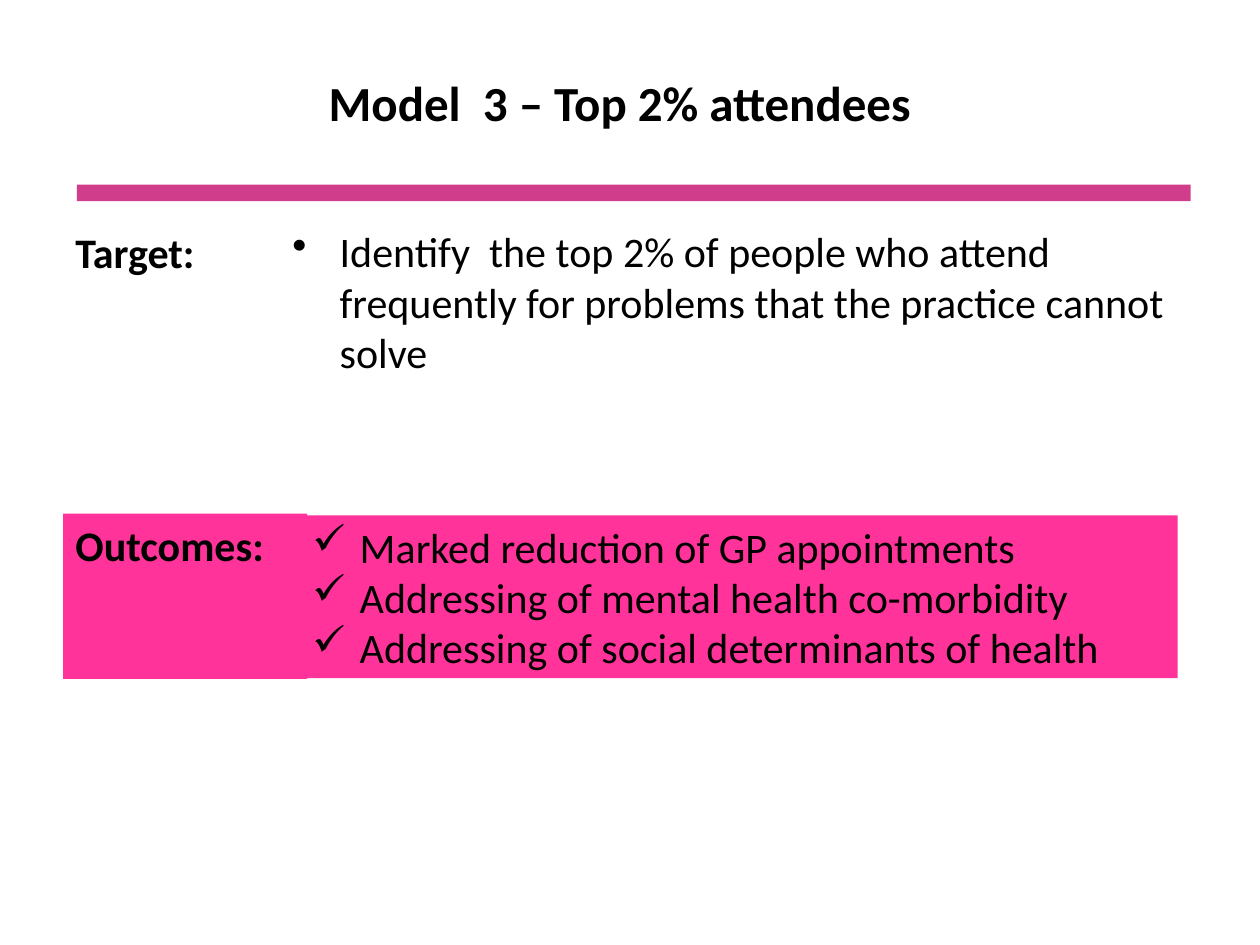
from lxml import etree
from pptx import Presentation
from pptx.dml.color import RGBColor
from pptx.enum.shapes import MSO_SHAPE
from pptx.enum.text import MSO_ANCHOR, PP_ALIGN
from pptx.oxml.ns import qn
from pptx.util import Pt

RECT = MSO_SHAPE.RECTANGLE
TOP, MIDDLE = MSO_ANCHOR.TOP, MSO_ANCHOR.MIDDLE
LEFT, CENTER = PP_ALIGN.LEFT, PP_ALIGN.CENTER

THEME = {
    "font": "Calibri",
    "title": 28,
    "body": 24,
    "text": RGBColor(0, 0, 0),
    "rule": RGBColor(0xD0, 0x3E, 0x8B),
    "panel": RGBColor(0xFF, 0x33, 0x99),
}
HANG = 27

TITLE = "Model  3 – Top 2% attendees"
TARGET = ["Identify  the top 2% of people who attend frequently "
          "for problems that the practice cannot solve"]
OUTCOMES = [
    "Marked reduction of GP appointments",
    "Addressing of mental health co-morbidity",
    "Addressing of social determinants of health",
]


def add_block(slide, box):
    return slide.shapes.add_textbox(*map(Pt, box))


def add_panel(slide, box, color):
    sp = slide.shapes.add_shape(RECT, *map(Pt, box))
    sp.shadow.inherit = False
    sp.fill.solid()
    sp.fill.fore_color.rgb = color
    sp.line.fill.background()
    return sp


def write(sp, lines, size=THEME["body"], bold=False, align=LEFT, anchor=TOP, bullet=None):
    tf = sp.text_frame
    tf.word_wrap = True
    tf.vertical_anchor = anchor
    for i, line in enumerate(lines):
        p = tf.add_paragraph() if i else tf.paragraphs[0]
        p.alignment = align
        if bullet:
            pPr = p._p.get_or_add_pPr()
            pPr.set("marL", str(Pt(HANG)))
            pPr.set("indent", str(-Pt(HANG)))
            etree.SubElement(pPr, qn("a:buChar")).set("char", bullet)
        r = p.add_run()
        r.text = line
        r.font.name = THEME["font"]
        r.font.size = Pt(size)
        r.font.bold = bold
        r.font.color.rgb = THEME["text"]


def main():
    """Build the slide on the top 2% of attendees and save it."""
    prs = Presentation()
    prs.slide_width, prs.slide_height = Pt(720), Pt(540)
    s = prs.slides.add_slide(prs.slide_layouts[6])

    write(add_panel(s, (171.5, 294.5, 501.5, 93), THEME["panel"]), OUTCOMES,
          anchor=MIDDLE, bullet="✓")
    add_panel(s, (44, 105.5, 636.5, 9.5), THEME["rule"])
    write(add_block(s, (3, 13.5, 702, 90)), [TITLE],
          size=THEME["title"], bold=True, align=CENTER, anchor=MIDDLE)
    write(add_block(s, (36, 126, 648, 71)), ["Target:"], bold=True)
    write(add_block(s, (160, 125.5, 514, 94.5)), TARGET, bullet="•")
    write(add_panel(s, (36, 293.5, 139.5, 94.5), THEME["panel"]), ["Outcomes:"], bold=True)

    prs.save("out.pptx")


if __name__ == "__main__":
    main()
